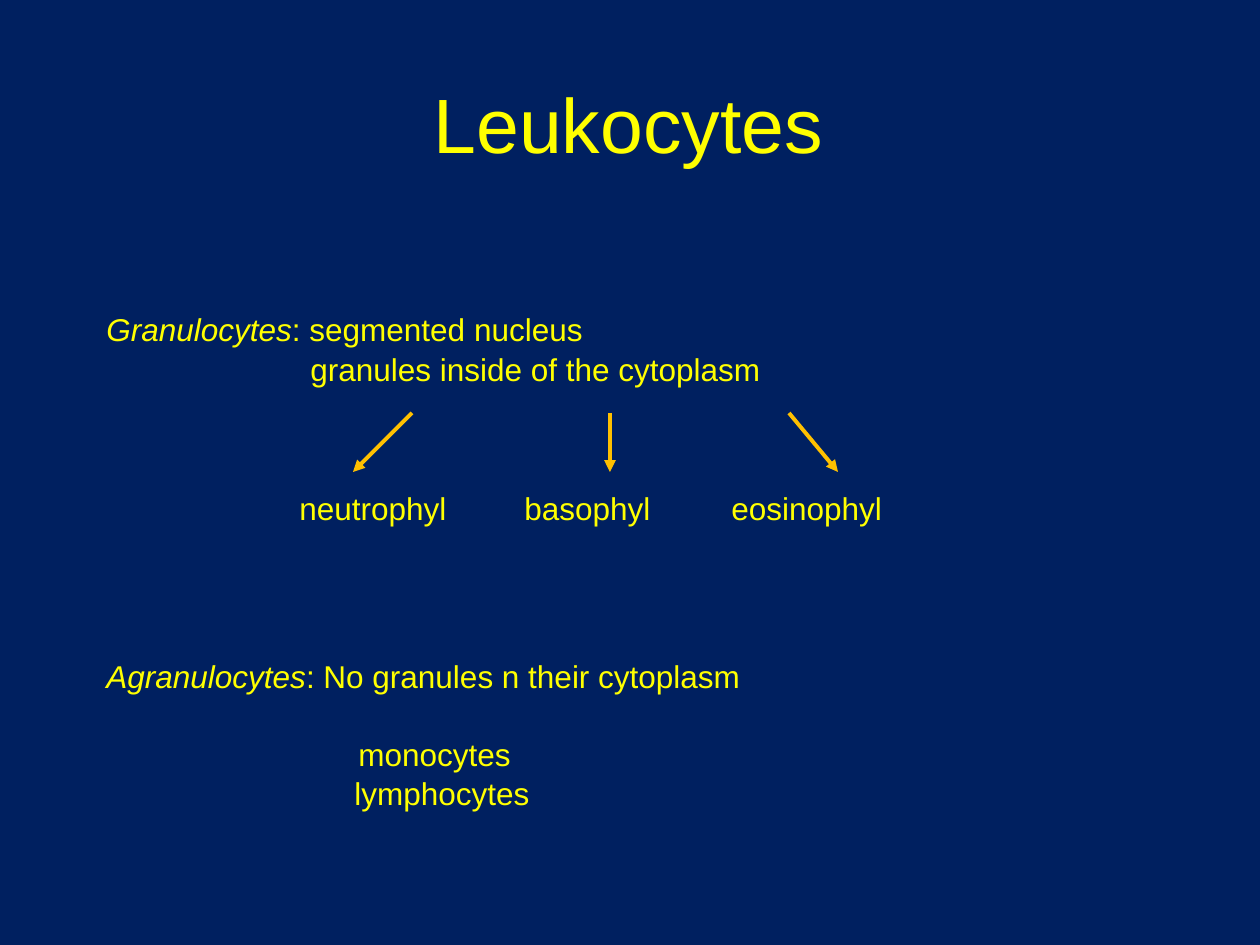
from pptx import Presentation
from pptx.dml.color import RGBColor
from pptx.enum.shapes import MSO_CONNECTOR as Connector
from pptx.enum.text import MSO_ANCHOR as Anchor, PP_ALIGN as Align
from pptx.oxml.ns import qn
from pptx.util import Pt
from lxml.etree import SubElement

SCALE = 914400 / 126
COLORS = {"background": "002060", "text": "FFFF00", "arrow": "FFC000"}
FONT = "Arial"
BODY_SIZE = 18


def px(length):
    return round(length * SCALE)


def add_text_box(slide, left, top, width, height):
    frame = slide.shapes.add_textbox(px(left), px(top), px(width), px(height)).text_frame
    frame.word_wrap = True
    return frame


def add_run(paragraph, text, size=BODY_SIZE, italic=False):
    run = paragraph.add_run()
    run.text = text
    run.font.name = FONT
    run.font.size = Pt(size)
    run.font.italic = italic
    run.font.color.rgb = RGBColor.from_string(COLORS["text"])


def add_title(slide, text):
    frame = add_text_box(slide, 42, 31, 1173, 183)
    frame.vertical_anchor = Anchor.MIDDLE
    paragraph = frame.paragraphs[0]
    paragraph.alignment = Align.CENTER
    add_run(paragraph, text, size=44)


def add_definition(slide, box, term, meaning, details):
    """Details are (text, indent in px, space before in points)."""
    frame = add_text_box(slide, *box)
    heading = frame.paragraphs[0]
    add_run(heading, term, italic=True)
    add_run(heading, f": {meaning}")
    for text, indent, space in details:
        paragraph = frame.add_paragraph()
        paragraph.space_before = Pt(space)
        properties = paragraph._p.get_or_add_pPr()
        properties.set("marL", str(px(indent)))
        properties.set("indent", "0")
        add_run(paragraph, text)


def add_label(slide, left, text):
    frame = add_text_box(slide, left, 483, 189, 50)
    add_run(frame.paragraphs[0], text)


def add_arrow(slide, start, end):
    arrow = slide.shapes.add_connector(
        Connector.STRAIGHT, px(start), px(413), px(end), px(472))
    arrow.line.color.rgb = RGBColor.from_string(COLORS["arrow"])
    arrow.line.width = Pt(2.25)
    SubElement(arrow.line._get_or_add_ln(), qn("a:tailEnd"), type="triangle")
    SubElement(arrow._element.spPr, qn("a:effectLst"))


def main():
    presentation = Presentation()
    presentation.slide_width, presentation.slide_height = px(1260), px(945)
    slide = presentation.slides.add_slide(presentation.slide_layouts[6])
    background = slide.background.fill
    background.solid()
    background.fore_color.rgb = RGBColor.from_string(COLORS["background"])

    add_title(slide, "Leukocytes")

    # Granulocytes and their three types
    add_definition(slide, (94, 304, 814, 89), "Granulocytes", "segmented nucleus",
                   [("granules inside of the cytoplasm", 204, 1)])
    for label, left, start, end in [
        ("neutrophyl", 287, 412, 353),
        ("basophyl", 512, 610, 610),
        ("eosinophyl", 719, 789, 838),
    ]:
        add_arrow(slide, start, end)
        add_label(slide, left, label)

    # Agranulocytes and their two types
    add_definition(slide, (94, 651, 853, 165), "Agranulocytes",
                   "No granules n their cytoplasm",
                   [("monocytes", 252, 22.7), ("lymphocytes", 248, 1)])

    presentation.save("out.pptx")


if __name__ == "__main__":
    main()
